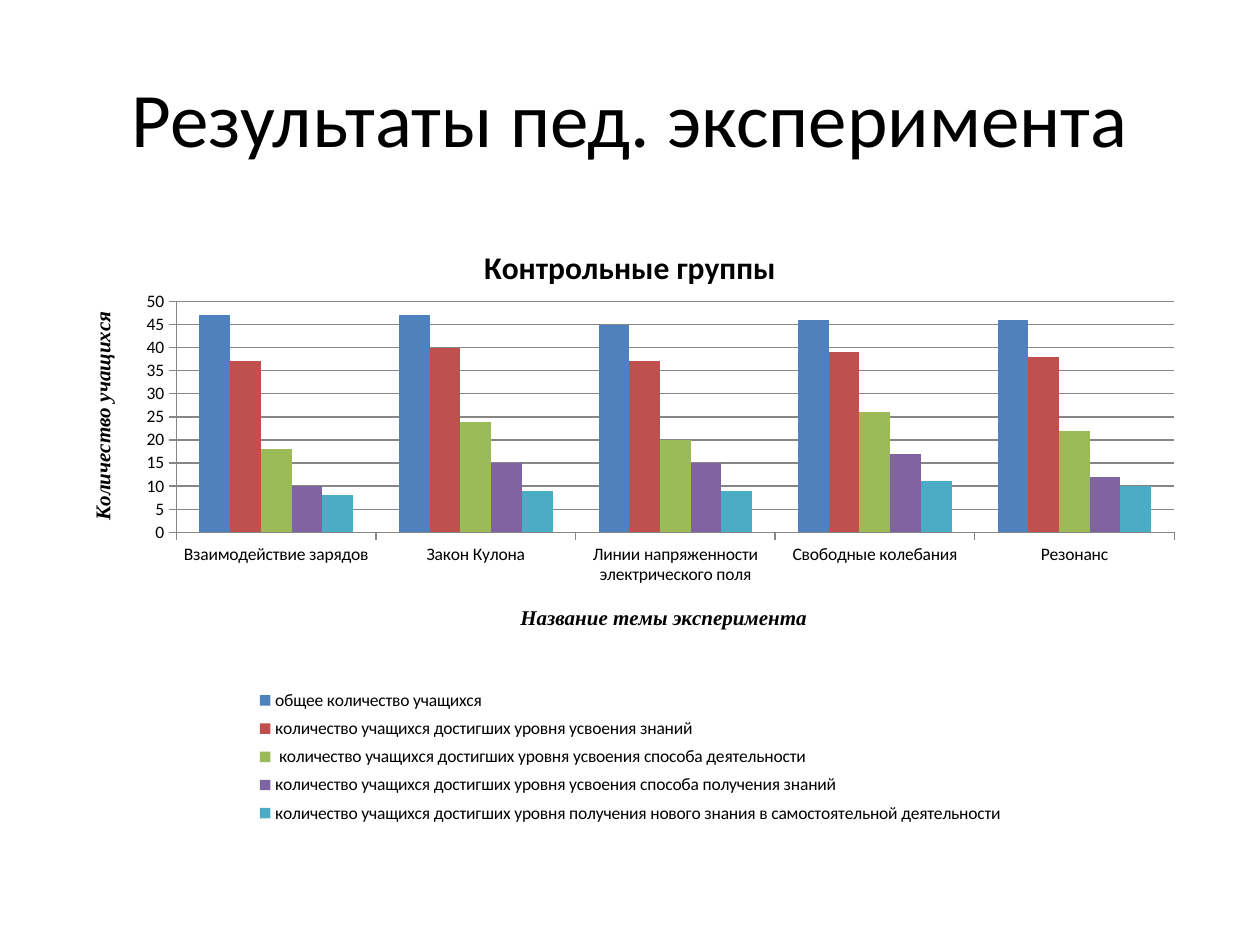
import pptx
import pptx.chart.data
import pptx.dml.color
import pptx.enum.chart
import pptx.enum.text
import pptx.oxml
import pptx.oxml.ns
import pptx.util

Inches, Pt = pptx.util.Inches, pptx.util.Pt
RGBColor = pptx.dml.color.RGBColor
qn = pptx.oxml.ns.qn

BLACK = RGBColor(0x00, 0x00, 0x00)
GRAY = RGBColor(0x86, 0x86, 0x86)
BLUE = RGBColor(0x4F, 0x81, 0xBD)
RED = RGBColor(0xC0, 0x50, 0x4D)
GREEN = RGBColor(0x9B, 0xBB, 0x59)
PURPLE = RGBColor(0x80, 0x64, 0xA2)
TEAL = RGBColor(0x4B, 0xAC, 0xC6)

HEADING = "Результаты пед. эксперимента"
CHART_TITLE = "Контрольные группы"
TOPIC_TITLE = "Название темы эксперимента"
COUNT_TITLE = "Количество учащихся"
TOPICS = ["Взаимодействие зарядов", "Закон Кулона",
          "Линии напряженности электрического поля",
          "Свободные колебания", "Резонанс"]
SERIES = [
    ("общее количество учащихся", BLUE, (47, 47, 45, 46, 46)),
    ("количество учащихся достигших уровня усвоения знаний",
     RED, (37, 40, 37, 39, 38)),
    (" количество учащихся достигших уровня усвоения способа деятельности",
     GREEN, (18, 24, 20, 26, 22)),
    ("количество учащихся достигших уровня усвоения способа получения знаний",
     PURPLE, (10, 15, 15, 17, 12)),
    ("количество учащихся достигших уровня получения нового знания "
     "в самостоятельной деятельности", TEAL, (8, 9, 9, 11, 10)),
]


def style_font(font, size, name="Calibri", bold=False, italic=False):
    font.size, font.name = Pt(size), name
    font.bold, font.italic = bold, italic
    font.color.rgb = BLACK


def write_text(frame, text, **style):
    para = frame.paragraphs[0]
    para.alignment = pptx.enum.text.PP_ALIGN.CENTER
    span = para.add_run()
    span.text = text
    style_font(span.font, **style)


def place(element, index, target=None, **fractions):
    """Give a chart part a manual layout, in fractions of the chart."""
    for old in element.findall(qn("c:layout")):
        element.remove(old)
    inner = f'<c:layoutTarget val="{target}"/>' if target else ""
    inner += "".join(f'<c:{key}Mode val="edge"/>' for key in "xy")
    inner += "".join(f'<c:{key} val="{value}"/>' for key, value in fractions.items())
    element.insert(index, pptx.oxml.parse_xml(
        f'<c:layout {pptx.oxml.ns.nsdecls("c")}>'
        f'<c:manualLayout>{inner}</c:manualLayout></c:layout>'))


def style_axis(axis, title, x, y):
    axis.major_tick_mark = pptx.enum.chart.XL_TICK_MARK.OUTSIDE
    axis.format.line.color.rgb = GRAY
    style_font(axis.tick_labels.font, 10)
    write_text(axis.axis_title.text_frame, title, size=12,
               name="Times New Roman", bold=True, italic=True)
    place(axis.axis_title._element, 1, x=x, y=y)


def add_results_chart(page):
    data = pptx.chart.data.CategoryChartData()
    data.categories = TOPICS
    for name, _, values in SERIES:
        data.add_series(name, values)
    chart = page.shapes.add_chart(
        pptx.enum.chart.XL_CHART_TYPE.COLUMN_CLUSTERED,
        Inches(0.5), Inches(1.75), Inches(9), Inches(4.95), data).chart
    style_font(chart.font, 10)
    write_text(chart.chart_title.text_frame, CHART_TITLE, size=18, bold=True)

    plot = chart.plots[0]
    plot.gap_width, plot.overlap, plot.vary_by_categories = 150, 0, False
    for series, (_, color, _) in zip(plot.series, SERIES):
        series.format.fill.solid()
        series.format.fill.fore_color.rgb = color

    style_axis(chart.category_axis, TOPIC_TITLE, x=0.4, y=0.61)
    counts = chart.value_axis
    style_axis(counts, COUNT_TITLE, x=0.02, y=0.14)
    counts.minimum_scale, counts.maximum_scale, counts.major_unit = 0, 50, 5
    counts.major_gridlines.format.line.color.rgb = GRAY

    chart.has_legend = True
    chart.legend.position = pptx.enum.chart.XL_LEGEND_POSITION.BOTTOM
    chart.legend.include_in_layout = False
    style_font(chart.legend.font, 10)
    place(chart.legend._element, 1, x=0.16, y=0.74, w=0.68, h=0.24)
    plot_area = chart._chartSpace.find(qn("c:chart")).find(qn("c:plotArea"))
    place(plot_area, 0, target="inner", x=0.1, y=0.13, w=0.88, h=0.37)


def main():
    deck = pptx.Presentation()
    deck.slide_width, deck.slide_height = Inches(10), Inches(7.5)
    page = deck.slides.add_slide(deck.slide_layouts[6])
    box = page.shapes.add_textbox(Inches(0.5), Inches(0.3), Inches(9), Inches(1.25))
    box.text_frame.word_wrap = True
    box.text_frame.vertical_anchor = pptx.enum.text.MSO_ANCHOR.MIDDLE
    write_text(box.text_frame, HEADING, size=44)
    add_results_chart(page)
    deck.save("out.pptx")


if __name__ == "__main__":
    main()
